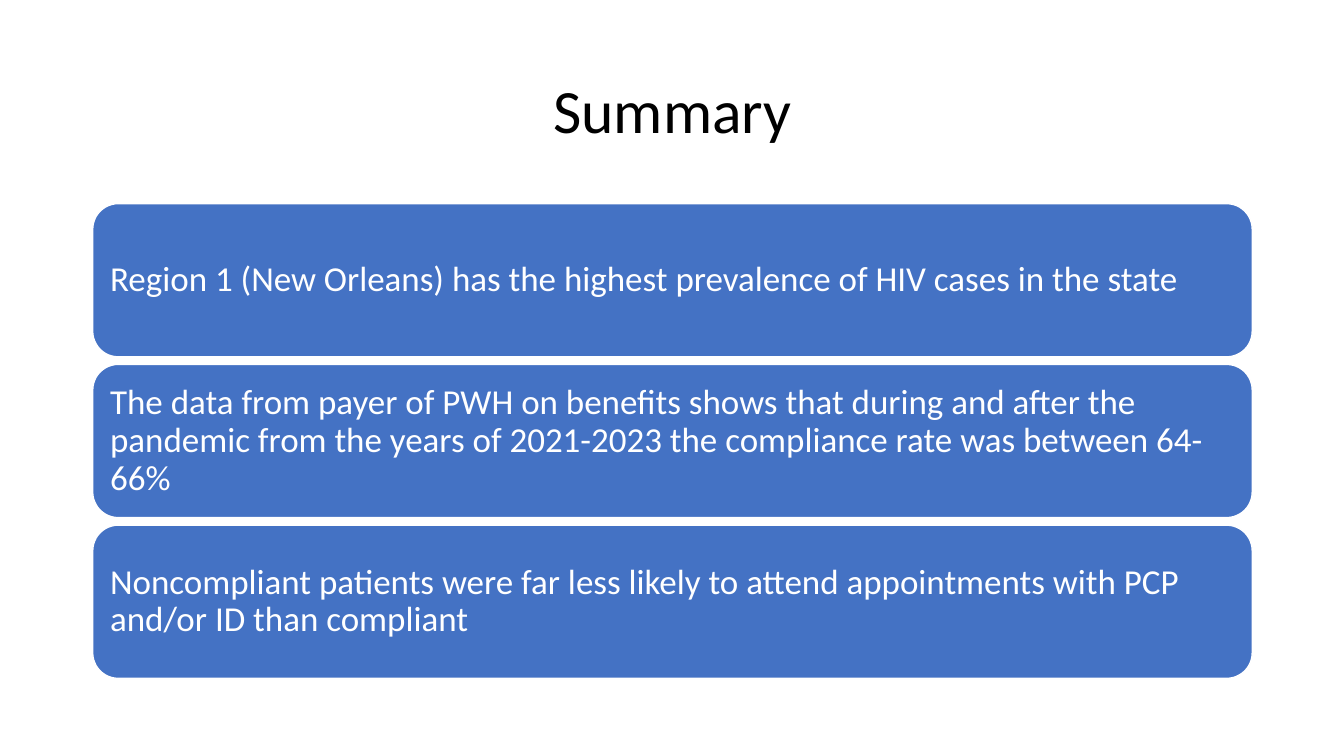
from pptx import Presentation
from pptx.dml.color import RGBColor
from pptx.enum.shapes import MSO_SHAPE as Shape
from pptx.enum.text import MSO_ANCHOR as Anchor, PP_ALIGN as Align
from pptx.util import Inches, Pt


def color(code):
    return RGBColor.from_string(code)


def write(frame, text, size, tint, font, align=Align.LEFT, after=0, inset=0.1):
    frame.word_wrap = True
    frame.vertical_anchor = Anchor.MIDDLE
    frame.margin_left = frame.margin_right = Inches(inset)
    frame.margin_top = frame.margin_bottom = Inches(inset)
    para = frame.paragraphs[0]
    para.alignment = align
    para.line_spacing = 0.9
    para.space_after = Pt(after)
    run = para.add_run()
    run.text = text
    run.font.name = font
    run.font.size = Pt(size)
    run.font.color.rgb = color(tint)


class Deck:
    font = "Calibri"
    blue = "4472C4"
    white = "FFFFFF"
    black = "000000"
    left = 0.92
    width = 11.5

    def __init__(self, show):
        self.slide = show.slides.add_slide(show.slide_layouts[5])

    def title(self, text, top, height):
        title = self.slide.shapes.title
        title.left, title.top = Inches(self.left), Inches(top)
        title.width, title.height = Inches(self.width), Inches(height)
        write(title.text_frame, text, 44, self.black, self.font, align=Align.CENTER)

    def card(self, text, top, height):
        card = self.slide.shapes.add_shape(
            Shape.ROUNDED_RECTANGLE,
            Inches(self.left), Inches(top), Inches(self.width), Inches(height))
        card.shadow.inherit = False
        card.fill.solid()
        card.fill.fore_color.rgb = color(self.blue)
        card.line.color.rgb = color(self.white)
        card.line.width = Pt(1)
        write(card.text_frame, text, 25, self.white, self.font)

    def stack(self, texts, top, bottom, height):
        step = (bottom - top - height) / (len(texts) - 1)
        for row, text in enumerate(texts):
            self.card(text, top + row * step, height)


def main():
    show = Presentation()
    show.slide_width, show.slide_height = Inches(13.33), Inches(7.5)
    deck = Deck(show)
    deck.title("Summary", top=0.4, height=1.45)
    deck.stack([
        "Region 1 (New Orleans) has the highest prevalence of HIV cases in the state",
        "The data from payer of PWH on benefits shows that during and after the "
        "pandemic from the years of 2021-2023 the compliance rate was between 64-66%",
        "Noncompliant patients were far less likely to attend appointments with PCP "
        "and/or ID than compliant",
    ], top=2.02, bottom=6.73, height=1.52)
    show.save("out.pptx")


if __name__ == "__main__":
    main()
